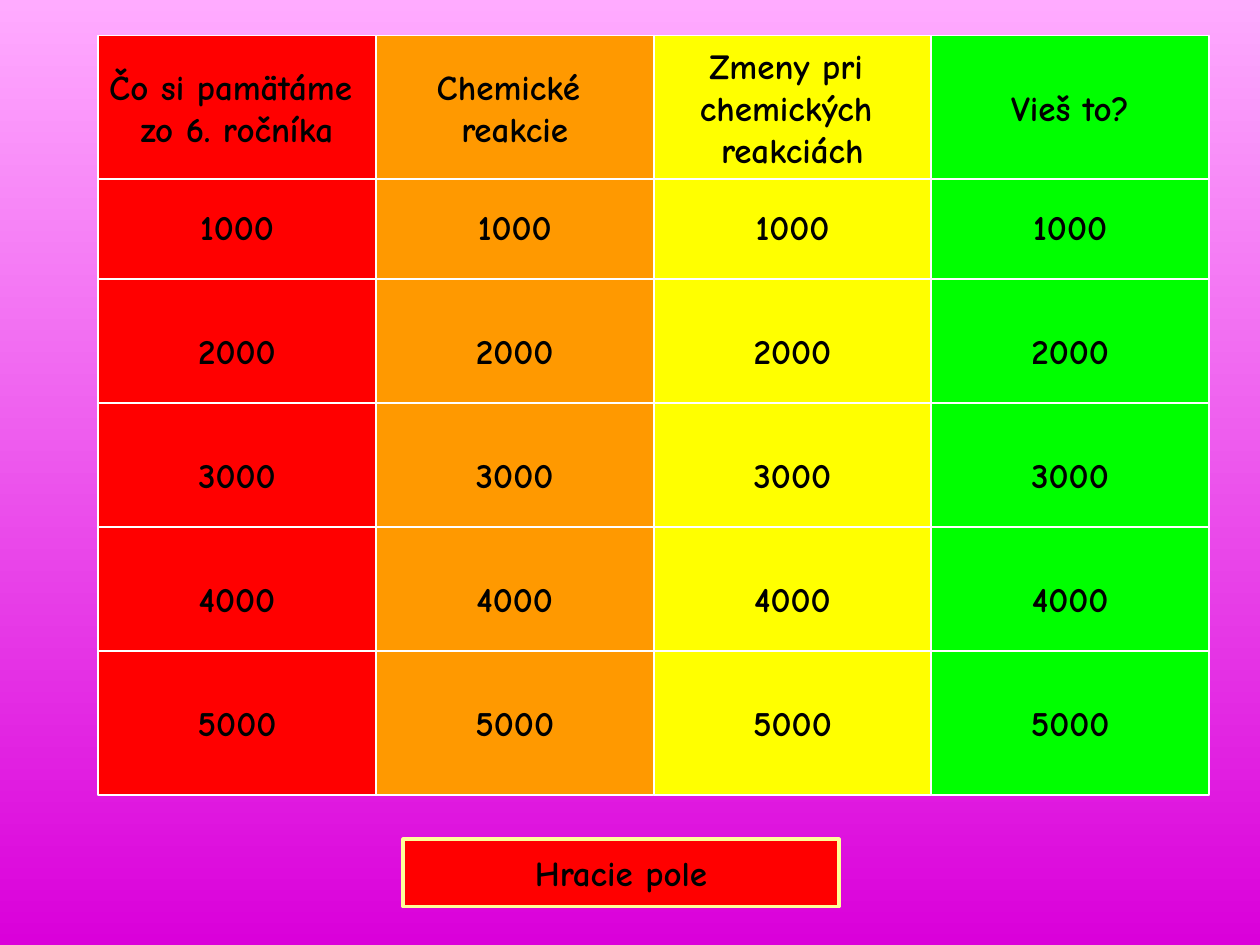
from pptx import Presentation
from pptx.dml.color import RGBColor
from pptx.enum import shapes, text
from pptx.util import Pt


def rgb(value):
    return RGBColor.from_string(value)


def add_button(slide, caption, left, top, width, height, fill, border, border_width):
    button = slide.shapes.add_shape(
        shapes.MSO_SHAPE.ACTION_BUTTON_CUSTOM, Pt(left), Pt(top), Pt(width), Pt(height))
    button.shadow.inherit = False
    button.fill.solid()
    button.fill.fore_color.rgb = rgb(fill)
    button.line.color.rgb = rgb(border)
    button.line.width = Pt(border_width)
    frame = button.text_frame
    frame.text = caption
    frame.word_wrap = False
    frame.vertical_anchor = text.MSO_ANCHOR.MIDDLE
    for paragraph in frame.paragraphs:
        paragraph.alignment = text.PP_ALIGN.CENTER
        for run in paragraph.runs:
            run.font.name = "Comic Neue"
            run.font.size = Pt(20)
            run.font.bold = True
            run.font.color.rgb = rgb("000000")


deck = Presentation()
deck.slide_width, deck.slide_height = Pt(720), Pt(540)
board = deck.slides.add_slide(deck.slide_layouts[6])

backdrop = board.background.fill
backdrop.gradient()
backdrop.gradient_angle = 270
for stop, color in zip(backdrop.gradient_stops, ("FFABFF", "DA00DA")):
    stop.color.rgb = rgb(color)

categories = [
    ("Čo si pamätáme \nzo 6. ročníka", "FF0000"),
    ("Chemické \nreakcie", "FF9900"),
    ("Zmeny pri \nchemických \nreakciách", "FFFF00"),
    ("Vieš to?", "00FF00"),
]
points = (1000, 2000, 3000, 4000, 5000)
board_left, column_step, field_width, field_height = 56.2, 158.7, 158.5, 82
header_top, points_top, row_step = 20.3, 88.5, 70.9

for row, value in enumerate(points):
    for column, (category, color) in enumerate(categories):
        add_button(board, str(value), board_left + column * column_step,
                   points_top + row * row_step, field_width, field_height,
                   color, "FFFFFF", 1)

for column, (category, color) in enumerate(categories):
    add_button(board, category, board_left + column * column_step, header_top,
               field_width, field_height, color, "FFFFFF", 1)

add_button(board, "Hracie pole", 230.4, 479.5, 249, 38.5, "FF0000", "FFFF99", 2)

deck.save("out.pptx")
